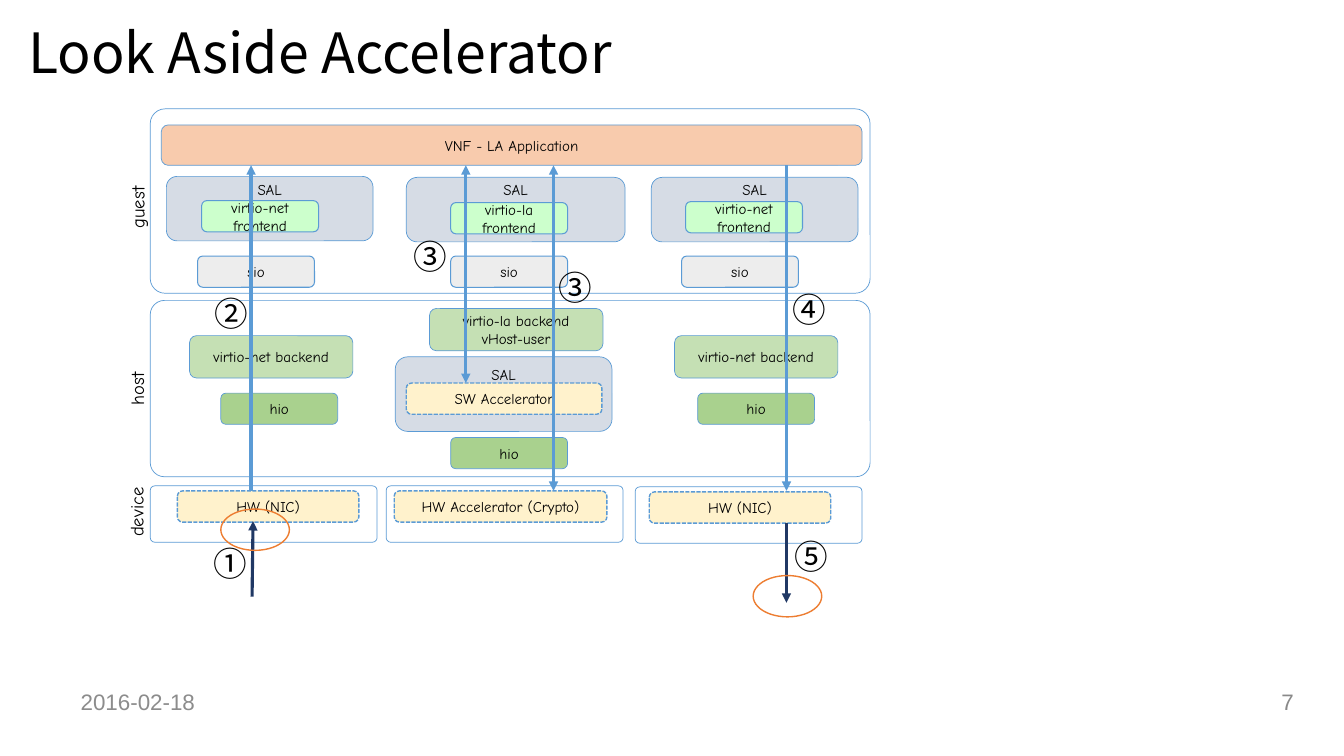
from dataclasses import dataclass
from typing import Optional

from lxml.etree import SubElement
from pptx import Presentation
from pptx.dml.color import RGBColor
from pptx.enum.dml import MSO_LINE
from pptx.enum.shapes import MSO_CONNECTOR, MSO_SHAPE
from pptx.enum.text import MSO_ANCHOR, PP_ALIGN
from pptx.oxml.ns import qn
from pptx.util import Pt

EMU_PER_PX = 9144
BLUE, NAVY, ORANGE, BLACK, GRAY = "5B9BD5", "203864", "ED7D31", "000000", "898989"
COMIC, NOTO, ARIAL = "Comic Neue", "Noto Sans CJK SC", "Arial"


@dataclass(frozen=True)
class Style:
    fill: Optional[str]
    line_pt: float = 0.5
    line: str = BLUE
    dashed: bool = False
    preset: MSO_SHAPE = MSO_SHAPE.ROUNDED_RECTANGLE
    radius: Optional[float] = None


@dataclass(frozen=True)
class Box:
    style: Style
    x: int
    y: int
    w: int
    h: int
    text: str = ""
    top_inset: Optional[int] = None


@dataclass(frozen=True)
class Arrow:
    x1: int
    y1: int
    x2: int
    y2: int
    color: str = BLUE
    head: bool = False
    tail: bool = False


@dataclass(frozen=True)
class Label:
    text: str
    x: int
    y: int
    w: int
    h: int
    size: float
    font: str
    color: str = BLACK
    align: PP_ALIGN = PP_ALIGN.LEFT
    rotation: int = 0
    inset: int = 10
    wrap: bool = False
    spacing: Optional[float] = None


FRAME = Style(None, radius=0.081)
APP = Style("F8CBAD")
SAL = Style("D6DCE5")
FRONTEND = Style("CCFFCC", 0.75)
SIO = Style("EDEDED", 0.75)
BACKEND = Style("C5E0B4")
HIO = Style("A9D18E")
ACCELERATOR = Style("FFF2CC", 1, dashed=True)
RING = Style(None, 1, ORANGE, preset=MSO_SHAPE.OVAL)

BOXES = [
    Box(FRAME, 149, 108, 714, 183),
    Box(FRAME, 149, 298, 714, 175),
    Box(FRAME, 149, 482, 225, 56),
    Box(FRAME, 383, 482, 235, 56),
    Box(FRAME, 630, 483, 225, 56),
    Box(APP, 160, 124, 695, 40, "VNF - LA Application"),
    Box(SAL, 165, 175, 205, 64, "SAL", 1),
    Box(SAL, 403, 176, 217, 64, "SAL", 0),
    Box(SAL, 646, 176, 205, 64, "SAL", 0),
    Box(SAL, 392, 354, 215, 74, "SAL", 5),
    Box(FRONTEND, 200, 199, 116, 31, "virtio-net frontend"),
    Box(FRONTEND, 447, 201, 116, 31, "virtio-la frontend"),
    Box(FRONTEND, 680, 200, 116, 31, "virtio-net frontend"),
    *(Box(SIO, x, 254, 116, 31, "sio") for x in (196, 447, 676)),
    Box(BACKEND, 188, 333, 162, 42, "virtio-net backend"),
    Box(BACKEND, 426, 306, 172, 42, "virtio-la backend\nvHost-user"),
    Box(BACKEND, 669, 333, 162, 42, "virtio-net backend"),
    *(Box(HIO, x, y, 116, 31, "hio") for x, y in ((219, 390), (447, 434), (692, 390))),
    Box(ACCELERATOR, 403, 380, 194, 31, "SW Accelerator"),
    Box(ACCELERATOR, 176, 487, 180, 31, "HW (NIC)"),
    Box(ACCELERATOR, 391, 487, 211, 31, "HW Accelerator (Crypto)"),
    Box(ACCELERATOR, 644, 488, 180, 31, "HW (NIC)"),
]

ARROWS = [
    Arrow(249, 164, 249, 487, head=True),
    Arrow(462, 164, 462, 380, head=True, tail=True),
    Arrow(549, 164, 549, 487, head=True, tail=True),
    Arrow(780, 164, 780, 487, tail=True),
    Arrow(250, 592, 251, 517, NAVY, tail=True),
    Arrow(780, 519, 780, 598, NAVY, tail=True),
]

RINGS = [Box(RING, x, y, 68, 41) for x, y in ((219, 505), (747, 571))]

STEPS = [("①", 202, 534), ("②", 203, 286), ("③", 400, 229),
         ("③", 544, 260), ("④", 776, 282), ("⑤", 778, 527)]
LAYERS = [("guest", 102, 186, 68), ("host", 106, 366, 59), ("device", 97, 488, 76)]

LABELS = [
    Label("Look Aside Accelerator", 18, 30, 1066, 50, 39.6, NOTO, wrap=True, spacing=0.9),
    Label("2016-02-18", 67, 670, 243, 53, 16, ARIAL, "8C8C8C", inset=13, wrap=True),
    Label("7", 1205, 670, 88, 53, 16, ARIAL, GRAY, PP_ALIGN.RIGHT, wrap=True),
    *(Label(t, x, y, w, 33, 13.3, COMIC, rotation=270) for t, x, y, w in LAYERS),
    *(Label(t, x, y, 54, 50, 24, NOTO) for t, x, y in STEPS),
]


def px(n: int) -> int:
    """Turn px into EMU."""
    return n * EMU_PER_PX


def rgb(color: str) -> RGBColor:
    """Turn a hex string into a colour."""
    return RGBColor.from_string(color)


def write(tf, text: str, size: float, font: str, color: str, align: PP_ALIGN) -> None:
    """Fill a text frame with evenly formatted paragraphs."""
    tf.text = text
    for p in tf.paragraphs:
        p.alignment = align
        p.font.size = Pt(size)
        p.font.name = font
        p.font.color.rgb = rgb(color)


def draw_box(shapes, box: Box) -> None:
    """Draw a preset shape with its text."""
    style = box.style
    s = shapes.add_shape(style.preset, px(box.x), px(box.y), px(box.w), px(box.h))
    s.shadow.inherit = False
    if style.fill:
        s.fill.solid()
        s.fill.fore_color.rgb = rgb(style.fill)
    else:
        s.fill.background()
    s.line.color.rgb = rgb(style.line)
    s.line.width = Pt(style.line_pt)
    if style.dashed:
        s.line.dash_style = MSO_LINE.SQUARE_DOT
    if style.radius is not None:
        s.adjustments[0] = style.radius
    if box.text:
        tf = s.text_frame
        tf.word_wrap = True
        tf.vertical_anchor = MSO_ANCHOR.MIDDLE
        if box.top_inset is not None:
            tf.vertical_anchor = MSO_ANCHOR.TOP
            tf.margin_top = px(box.top_inset)
        write(tf, box.text, 10.7, COMIC, BLACK, PP_ALIGN.CENTER)


def draw_arrow(shapes, arrow: Arrow) -> None:
    """Draw a straight line with its arrowheads."""
    s = shapes.add_connector(MSO_CONNECTOR.STRAIGHT, px(arrow.x1), px(arrow.y1),
                             px(arrow.x2), px(arrow.y2))
    s.line.color.rgb = rgb(arrow.color)
    s.line.width = Pt(2.25)
    ln = s.line._get_or_add_ln()
    for tag, shown in (("a:headEnd", arrow.head), ("a:tailEnd", arrow.tail)):
        if shown:
            SubElement(ln, qn(tag), type="triangle")
    SubElement(s._element.spPr, qn("a:effectLst"))


def draw_label(shapes, label: Label) -> None:
    """Draw a text box."""
    s = shapes.add_textbox(px(label.x), px(label.y), px(label.w), px(label.h))
    s.rotation = label.rotation
    tf = s.text_frame
    tf.word_wrap = label.wrap
    tf.vertical_anchor = MSO_ANCHOR.MIDDLE
    tf.margin_left = tf.margin_right = px(label.inset)
    write(tf, label.text, label.size, label.font, label.color, label.align)
    if label.spacing:
        tf.paragraphs[0].line_spacing = label.spacing


def main() -> None:
    """Build and save the slide."""
    prs = Presentation()
    prs.slide_width, prs.slide_height = px(1333), px(750)
    shapes = prs.slides.add_slide(prs.slide_layouts[6]).shapes
    for items, draw in ((BOXES, draw_box), (ARROWS, draw_arrow),
                        (RINGS, draw_box), (LABELS, draw_label)):
        for item in items:
            draw(shapes, item)
    prs.save("out.pptx")


if __name__ == "__main__":
    main()
